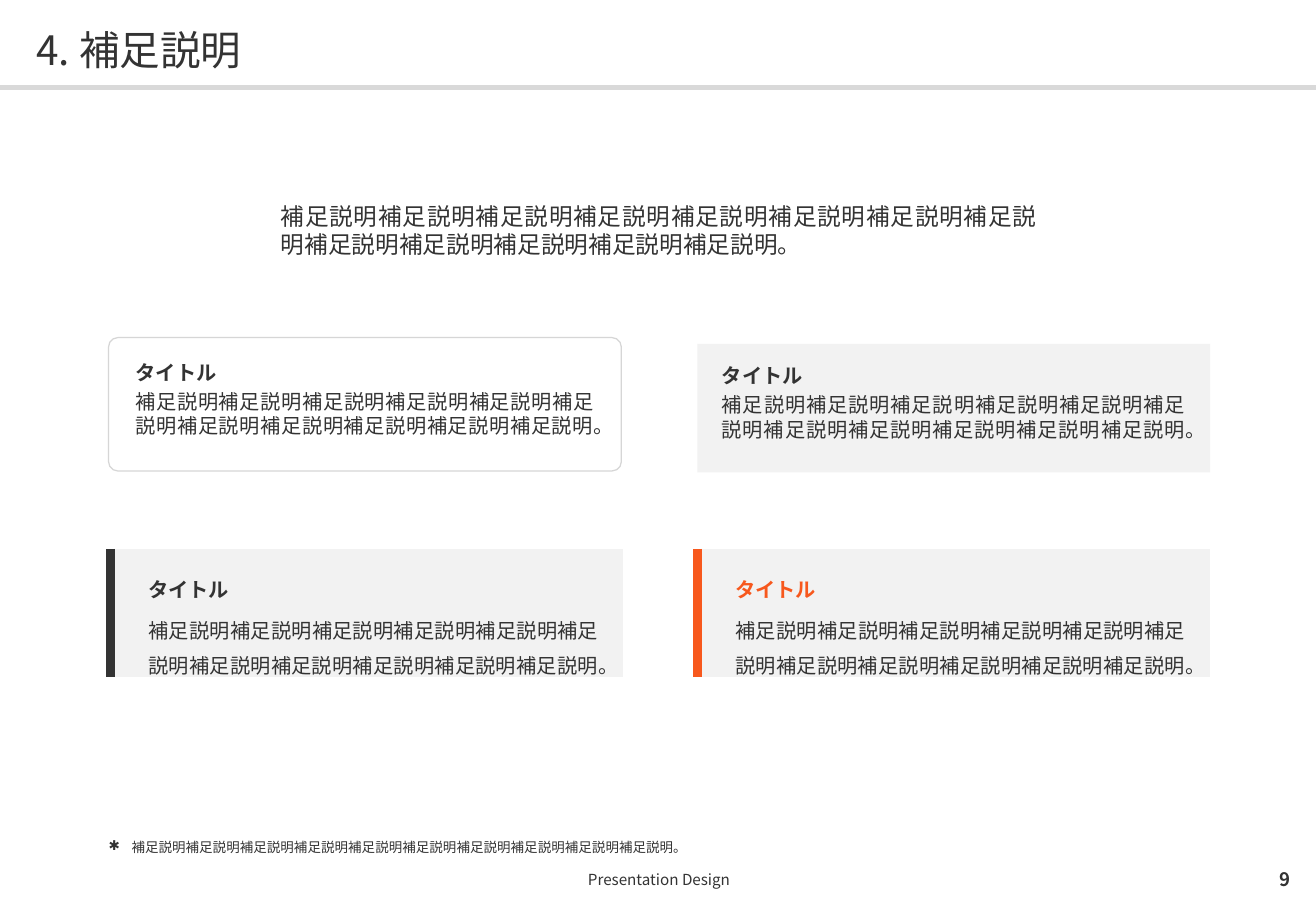
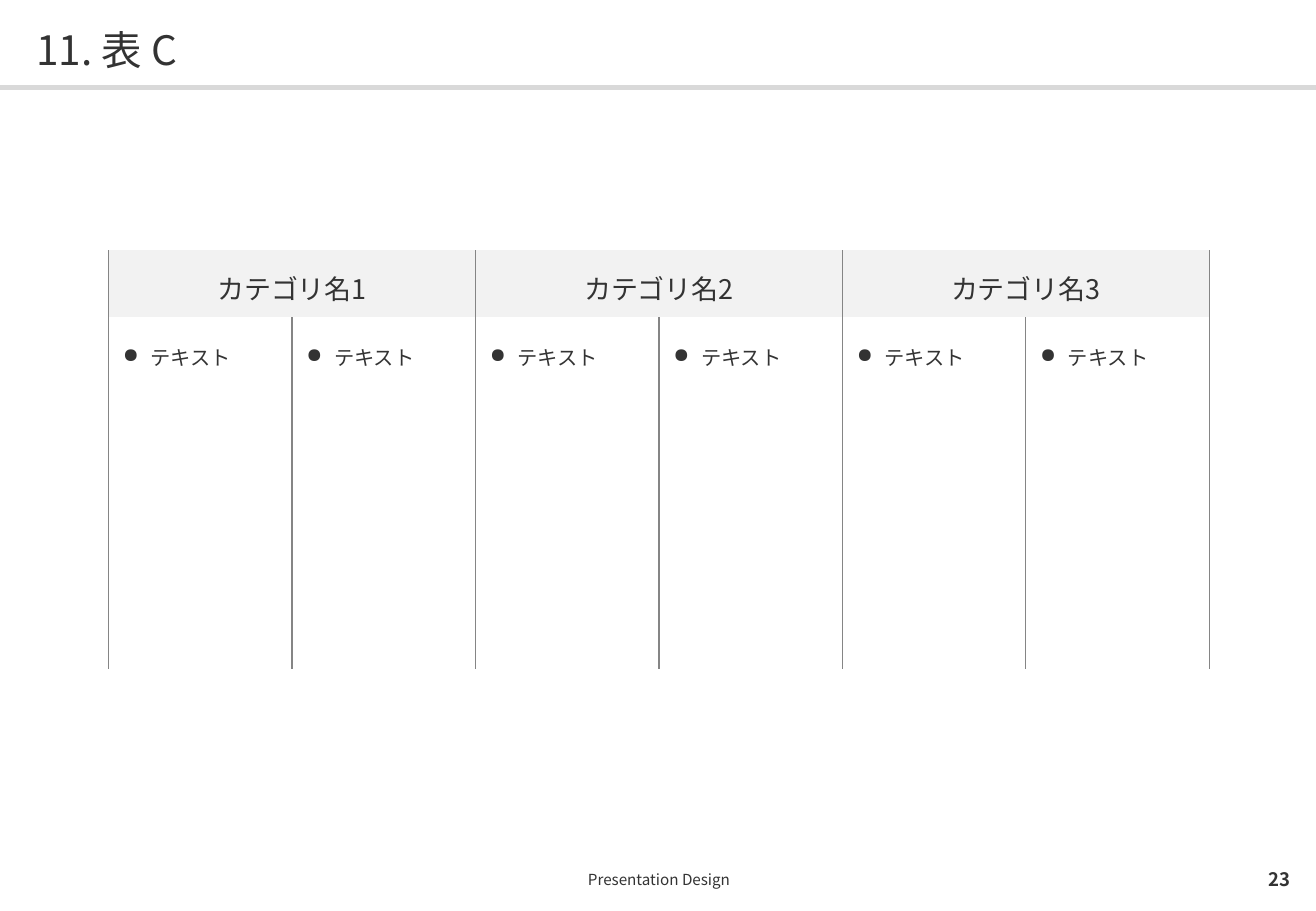
from dataclasses import dataclass

from lxml.etree import SubElement
from pptx import Presentation
from pptx.dml.color import RGBColor
from pptx.enum.lang import MSO_LANGUAGE_ID
from pptx.enum.shapes import MSO_SHAPE
from pptx.enum.text import MSO_ANCHOR, MSO_AUTO_SIZE, PP_ALIGN
from pptx.oxml.ns import qn
from pptx.util import Cm, Pt

FONT = "Noto Sans CJK JP"
INK, ORANGE = "333333", "F7581D"
PALE, BAND, OUTLINE, RULE = "F2F2F2", "D9D9D9", "D6D6D6", "858585"
PAGE_WIDTH, PAGE_HEIGHT = 27.51, 19.05
LEFT, CONTENT_WIDTH = 2.27, 23.01
RIGHT_COLUMN, CARD_WIDTH = 14.58, 10.72
CARD_INSETS = (0.51, 0.41, 0.51, 0.36)
PHRASE = "補足説明"
CARD_TEXT = PHRASE * 11 + "。"


@dataclass
class Para:
    text: str
    size: float
    color: str = INK
    bold: bool = False
    align: PP_ALIGN = PP_ALIGN.LEFT
    spacing: float = 1.0
    after: float = 0
    bullet: str = ""
    indent: float = 0


def rgb(value):
    return RGBColor.from_string(value)


def set_insets(target, insets):
    (target.margin_left, target.margin_top,
     target.margin_right, target.margin_bottom) = map(Cm, insets)


def write(frame, paras):
    for index, para in enumerate(paras):
        paragraph = frame.add_paragraph() if index else frame.paragraphs[0]
        paragraph.text = para.text
        paragraph.alignment = para.align
        paragraph.line_spacing = para.spacing
        paragraph.space_after = Pt(para.after)
        font = paragraph.font
        font.name, font.size, font.bold = FONT, Pt(para.size), para.bold
        font.color.rgb = rgb(para.color)
        font.language_id = MSO_LANGUAGE_ID.JAPANESE
        properties = paragraph._p.get_or_add_pPr()
        properties.set("hangingPunct", "1")
        defaults = properties.find(qn("a:defRPr"))
        SubElement(defaults, qn("a:ea")).set("typeface", FONT)
        if para.bullet:
            properties.set("marL", str(Cm(para.indent)))
            properties.set("indent", str(-Cm(para.indent)))
            mark = SubElement(properties, qn("a:buChar"))
            mark.set("char", para.bullet)
            defaults.addprevious(mark)


def add_text(page, area, paras, anchor=MSO_ANCHOR.TOP):
    frame = page.shapes.add_textbox(*map(Cm, area)).text_frame
    frame.word_wrap = True
    frame.vertical_anchor = anchor
    set_insets(frame, (0, 0, 0, 0))
    write(frame, paras)


def add_box(page, kind, area, fill, outline=None):
    box = page.shapes.add_shape(kind, *map(Cm, area))
    box.shadow.inherit = False
    box.fill.solid()
    box.fill.fore_color.rgb = rgb(fill)
    if outline:
        box.line.color.rgb = rgb(outline)
        box.line.width = Pt(0.75)
    else:
        box.line.fill.background()
    return box


def card_paras(title_color=INK, spacing=1.0):
    return [
        Para("タイトル", 12, title_color, True, spacing=spacing, after=3),
        Para(CARD_TEXT, 12, align=PP_ALIGN.JUSTIFY, spacing=spacing, after=3),
    ]


def add_card(page, kind, area, fill, outline=None):
    card = add_box(page, kind, area, fill, outline)
    if kind == MSO_SHAPE.ROUNDED_RECTANGLE:
        card.adjustments[0] = 0.07
    frame = card.text_frame
    frame.word_wrap = True
    frame.auto_size = MSO_AUTO_SIZE.SHAPE_TO_FIT_TEXT
    frame.vertical_anchor = MSO_ANCHOR.TOP
    set_insets(frame, CARD_INSETS)
    write(frame, card_paras())


def set_borders(cell, **borders):
    properties = cell._tc.get_or_add_tcPr()
    for position, side in enumerate("LRTB"):
        line = SubElement(properties, qn(f"a:ln{side}"))
        properties.insert(position, line)
        if side in borders:
            color, width = borders[side]
            line.set("w", str(Pt(width)))
            fill = SubElement(line, qn("a:solidFill"))
            SubElement(fill, qn("a:srgbClr")).set("val", color)
        else:
            line.set("w", "0")
            SubElement(line, qn("a:noFill"))


def add_grid(page, left, top, width, heights, column_count):
    frame = page.shapes.add_table(
        len(heights), column_count, Cm(left), Cm(top), Cm(width), Cm(sum(heights)))
    table = frame.table
    table.first_row = table.horz_banding = False
    for row, height in zip(table.rows, heights):
        row.height = Cm(height)
    for column in table.columns:
        column.width = Cm(width / column_count)
    return table


def fill_cell(cell, paras, insets, fill=None, anchor=MSO_ANCHOR.TOP):
    if fill:
        cell.fill.solid()
        cell.fill.fore_color.rgb = rgb(fill)
    else:
        cell.fill.background()
    cell.vertical_anchor = anchor
    set_insets(cell, insets)
    write(cell.text_frame, paras)


def add_accent_card(page, left, color):
    cell = add_grid(page, left, 11.48, CARD_WIDTH, [2.67], 1).cell(0, 0)
    fill_cell(cell, card_paras(color, 1.2), (0.79, 0.41, 0.51, 0), PALE, MSO_ANCHOR.MIDDLE)
    set_borders(cell, L=(color, 6))


def add_page(deck, title, number):
    page = deck.slides.add_slide(deck.slide_layouts[6])
    add_box(page, MSO_SHAPE.RECTANGLE, (0, 1.78, PAGE_WIDTH, 0.1), BAND)
    add_text(page, (0.76, 0.43, 26, 1.09),
             [Para(title, 24, spacing=1.1)], MSO_ANCHOR.MIDDLE)
    add_text(page, (LEFT, 18.03, CONTENT_WIDTH, 0.74),
             [Para("Presentation Design", 9, align=PP_ALIGN.CENTER)], MSO_ANCHOR.MIDDLE)
    add_text(page, (25.65, 18.03, 1.32, 0.71),
             [Para(str(number), 11, bold=True, align=PP_ALIGN.RIGHT)], MSO_ANCHOR.MIDDLE)
    return page


def build_notes_page(deck):
    page = add_page(deck, "4. 補足説明", 9)
    add_text(page, (5.87, 4.22, 15.8, 1.4),
             [Para(PHRASE * 13 + "。", 14, align=PP_ALIGN.JUSTIFY, after=3)])
    add_card(page, MSO_SHAPE.ROUNDED_RECTANGLE,
             (LEFT, 7.06, CARD_WIDTH, 2.79), "FFFFFF", OUTLINE)
    add_card(page, MSO_SHAPE.RECTANGLE, (RIGHT_COLUMN, 7.19, CARD_WIDTH, 2.69), PALE)
    add_accent_card(page, 2.31, INK)
    add_accent_card(page, RIGHT_COLUMN, ORANGE)
    add_text(page, (LEFT, 17.48, CONTENT_WIDTH, 0.46),
             [Para(PHRASE * 10 + "。", 8, spacing=1.2, bullet="✱", indent=0.48)])


def build_table_page(deck):
    page = add_page(deck, "11. 表 C", 23)
    table = add_grid(page, LEFT, 5.23, CONTENT_WIDTH, [1.4, 7.37], 6)
    for number in (1, 2, 3):
        first = 2 * number - 2
        header = table.cell(0, first)
        header.merge(table.cell(0, first + 1))
        fill_cell(header, [Para(f"カテゴリ名{number}", 16, align=PP_ALIGN.CENTER, spacing=1.1)],
                  (0, 0.3, 0, 0.2), PALE)
    for column in range(6):
        fill_cell(table.cell(1, column),
                  [Para("テキスト", 12, spacing=1.2, after=6, bullet="●", indent=0.58)],
                  (0.3, 0.41, 0.3, 0))
    for cell in table.iter_cells():
        set_borders(cell, L=(RULE, 0.75), R=(RULE, 0.75))


def main():
    deck = Presentation()
    deck.slide_width, deck.slide_height = Cm(PAGE_WIDTH), Cm(PAGE_HEIGHT)
    build_notes_page(deck)
    build_table_page(deck)
    deck.save("out.pptx")


if __name__ == "__main__":
    main()
